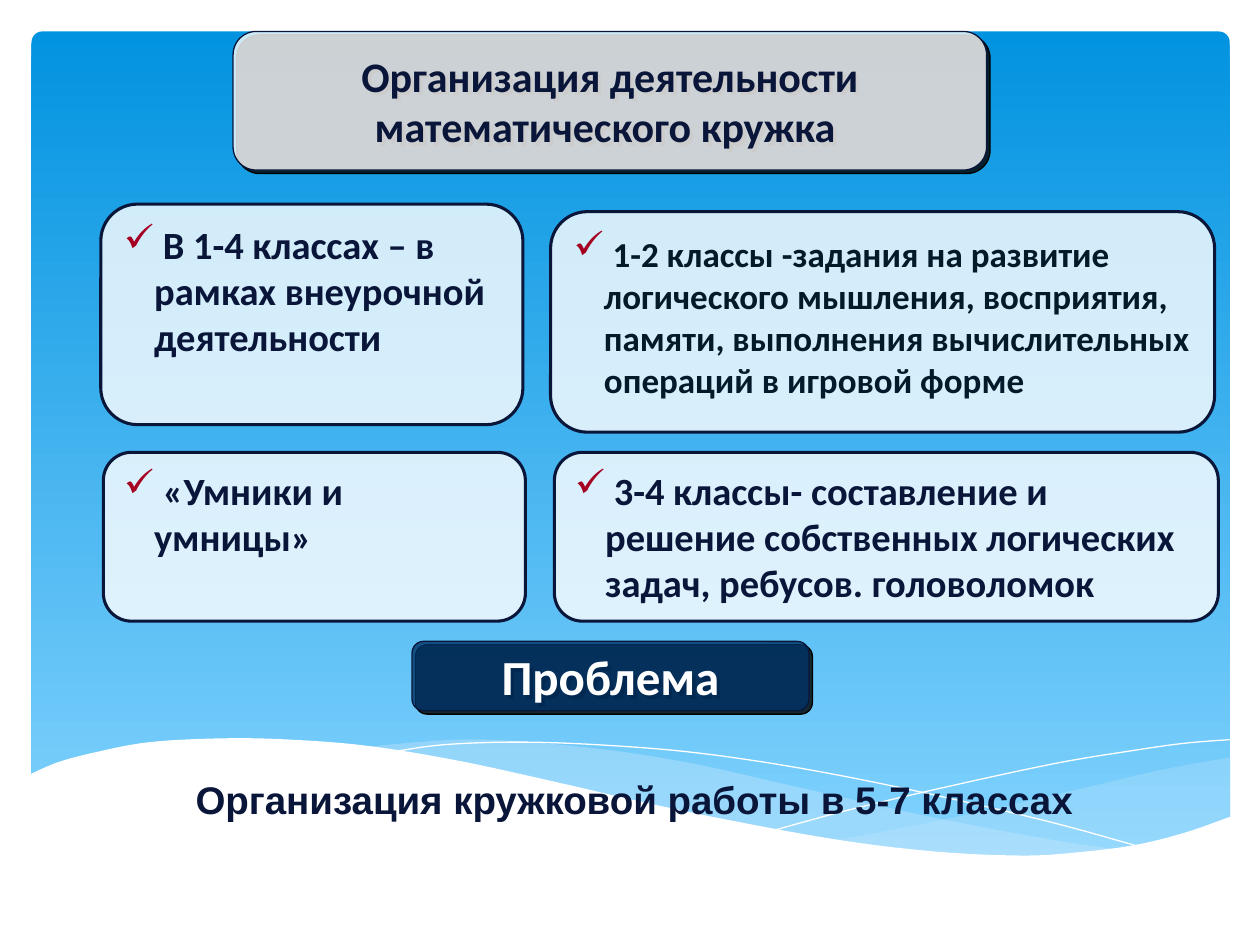
from lxml.etree import SubElement as Sub
from pptx import Presentation
from pptx.dml.color import RGBColor
from pptx.enum.shapes import MSO_SHAPE as Kind
from pptx.enum.text import MSO_ANCHOR as Anchor, MSO_AUTO_SIZE as Auto, PP_ALIGN as Align
from pptx.oxml.ns import qn
from pptx.util import Inches, Pt

NAVY, WHITE, SKY, RED = "091639", "FFFFFF", "C6E7FC", "A50021"


def color(code):
    """Turn a hex string into a colour."""
    return RGBColor.from_string(code)


def paint(shape, fill=None, alpha=100, line=None, width=0):
    """Set the fill, its opacity in percent and the outline."""
    shape.shadow.inherit = False
    if fill:
        shape.fill.solid()
        shape.fill.fore_color.rgb = color(fill)
        if alpha < 100:
            tint = shape.element.spPr.find(qn("a:solidFill")).find(qn("a:srgbClr"))
            Sub(tint, qn("a:alpha"), val=str(alpha * 1000))
    else:
        shape.fill.background()
    if line:
        shape.line.color.rgb = color(line)
        shape.line.width = Pt(width)
    else:
        shape.line.fill.background()


def drop(shape):
    """Cast a hard black shadow to the lower right."""
    effects = shape.element.spPr.find(qn("a:effectLst"))
    cast = Sub(effects, qn("a:outerShdw"), dist=str(Pt(2.8)), dir="2700000",
               algn="ctr", rotWithShape="0")
    Sub(cast, qn("a:srgbClr"), val="000000")


def write(para, text, size=22, font="Calibri", ink=NAVY, bold=True, align=Align.LEFT):
    """Add a formatted run to a paragraph."""
    para.alignment = align
    run = para.add_run()
    run.text = text
    run.font.size, run.font.name, run.font.bold = Pt(size), font, bold
    run.font.color.rgb = color(ink)


def check(para):
    """Give a paragraph a red check mark and a hanging indent."""
    para.space_before = Pt(11)
    props = para._p.get_or_add_pPr()
    props.set("marL", str(Inches(0.24)))
    props.set("indent", str(Inches(-0.24)))
    Sub(Sub(props, qn("a:buClr")), qn("a:srgbClr"), val=RED)
    Sub(props, qn("a:buChar"), char="✓")


def panel(slide, box, kind=Kind.ROUNDED_RECTANGLE):
    """Add a rounded panel at the given box in inches."""
    return slide.shapes.add_shape(kind, *map(Inches, box))


def plate(slide, box, lines, fill=WHITE, **style):
    """Add a shadowed plate with centred lines."""
    shape = panel(slide, box)
    paint(shape, fill, 80, NAVY, 0.75)
    drop(shape)
    frame = shape.text_frame
    frame.word_wrap = False
    frame.vertical_anchor = Anchor.MIDDLE
    for i, line in enumerate(lines):
        para = frame.add_paragraph() if i else frame.paragraphs[0]
        write(para, line, align=Align.CENTER, **style)


def card(slide, box, text, **style):
    """Add a translucent card with one checked item."""
    shape = panel(slide, box)
    paint(shape, WHITE, 80, NAVY, 1.75)
    frame = shape.text_frame
    frame.word_wrap = True
    frame.vertical_anchor = Anchor.TOP
    para = frame.paragraphs[0]
    write(para, " ", bold="size" in style)
    write(para, text, **style)
    check(para)


def note(slide, box, text):
    """Add the centred closing line."""
    frame = slide.shapes.add_textbox(*map(Inches, box)).text_frame
    frame.word_wrap = True
    frame.auto_size = Auto.SHAPE_TO_FIT_TEXT
    write(frame.paragraphs[0], text, font="Arial", align=Align.CENTER)


def curve(keys, steps=6):
    """Run a smooth line through the key points."""
    ends = [keys[0], *keys, keys[-1]]
    points = [keys[0]]
    for a, b, c, d in zip(ends, ends[1:], ends[2:], ends[3:]):
        for t in (i / steps for i in range(1, steps + 1)):
            points.append(tuple(
                q + t * (r - p + t * (2 * p - 5 * q + 4 * r - s
                                      + t * (3 * q - p - 3 * r + s))) / 2
                for p, q, r, s in zip(a, b, c, d)))
    return points


def trace(slide, points, close=True, **style):
    """Draw a freeform through points in inches."""
    spots = [(Inches(x), Inches(y)) for x, y in points]
    pen = slide.shapes.build_freeform(*spots[0])
    pen.add_line_segments(spots[1:], close=close)
    paint(pen.convert_to_shape(), **style)


def backdrop(slide, box):
    """Draw the blue gradient panel."""
    shape = panel(slide, box)
    shape.adjustments[0] = 0.013
    paint(shape)
    shape.fill.gradient()
    shape.fill.gradient_angle = 270
    for stop, code in zip(shape.fill.gradient_stops, ("0293E0", "83D3FE")):
        stop.color.rgb = color(code)


def waves(slide, left, right, base):
    """Draw the overlapping waves between two edges down to a base."""
    trace(slide, curve([(right, 6.01), (9.22, 6.11), (8.62, 6.25), (7.8, 6.44),
                        (7.07, 6.59), (6.62, 6.67)])
          + curve([(6.62, 6.67), (7.19, 6.74), (7.7, 6.79), (8.15, 6.8), (8.64, 6.77),
                   (9.07, 6.71), (9.44, 6.61), (right, 6.49)]),
          fill=SKY, alpha=29)
    trace(slide, curve([(8.94, 6.75), (8.38, 6.67), (7.42, 6.49), (6.3, 6.24), (5.55, 6.07),
                        (4.89, 5.96), (4.2, 5.89), (3.62, 5.87), (2.87, 5.93)])
          + curve([(2.87, 5.93), (3.63, 6.04), (4.5, 6.24), (5.3, 6.42), (6.19, 6.6),
                   (6.96, 6.72), (7.62, 6.79), (8.29, 6.8), (8.94, 6.75)]),
          fill=SKY, alpha=40)
    for keys in ([(3.1, 5.97), (3.53, 5.91), (4.17, 5.89), (4.89, 5.92), (5.57, 5.98),
                  (6.37, 6.1), (7.28, 6.28), (8.32, 6.52), (9.08, 6.73)],
                 [(6.14, 6.59), (6.73, 6.43), (7.49, 6.25), (8.37, 6.06), (8.97, 5.96),
                  (9.39, 5.9), (9.76, 5.87)]):
        trace(slide, curve(keys), close=False, line=WHITE)
    crest = [(right, 6.48), (9.4, 6.61), (8.99, 6.71), (8.5, 6.77), (8.09, 6.79),
             (7.44, 6.76), (6.68, 6.67), (5.79, 6.51), (5.03, 6.35), (4.47, 6.22),
             (3.65, 6.04), (2.92, 5.92), (2.3, 5.87), (1.77, 5.86), (1.19, 5.89),
             (0.76, 5.97), (0.46, 6.05), (left, 6.15)]
    trace(slide, curve(crest) + [(left, base), (right, base)], fill=WHITE)


def main():
    """Build and save the slide."""
    deck = Presentation()
    deck.slide_width, deck.slide_height = Inches(10), Inches(7.5)
    slide = deck.slides.add_slide(deck.slide_layouts[6])
    backdrop(slide, (0.25, 0.25, 9.51, 6.6))
    waves(slide, 0.23, 9.77, 7.31)
    plate(slide, (3.27, 5.09, 3.15, 0.55), ["Проблема"], fill="003366", size=28, ink=WHITE)
    card(slide, (0.8, 1.62, 3.35, 1.75), "В 1-4 классах – в рамках внеурочной деятельности")
    card(slide, (4.37, 1.68, 5.27, 1.75),
         "1-2 классы -задания на развитие логического мышления, восприятия, памяти, "
         "выполнения вычислительных операций в игровой форме", size=20, ink="021B2B")
    card(slide, (0.82, 3.59, 3.35, 1.34), "«Умники и умницы»")
    card(slide, (4.4, 3.59, 5.27, 1.34),
         "3-4 классы- составление и решение собственных логических задач, "
         "ребусов. головоломок")
    note(slide, (1.06, 6.11, 7.95, 0.47), "Организация кружковой работы в 5-7 классах")
    plate(slide, (1.85, 0.25, 5.98, 1.1),
          ["Организация деятельности", "математического кружка "], size=24)
    deck.save("out.pptx")


if __name__ == "__main__":
    main()
